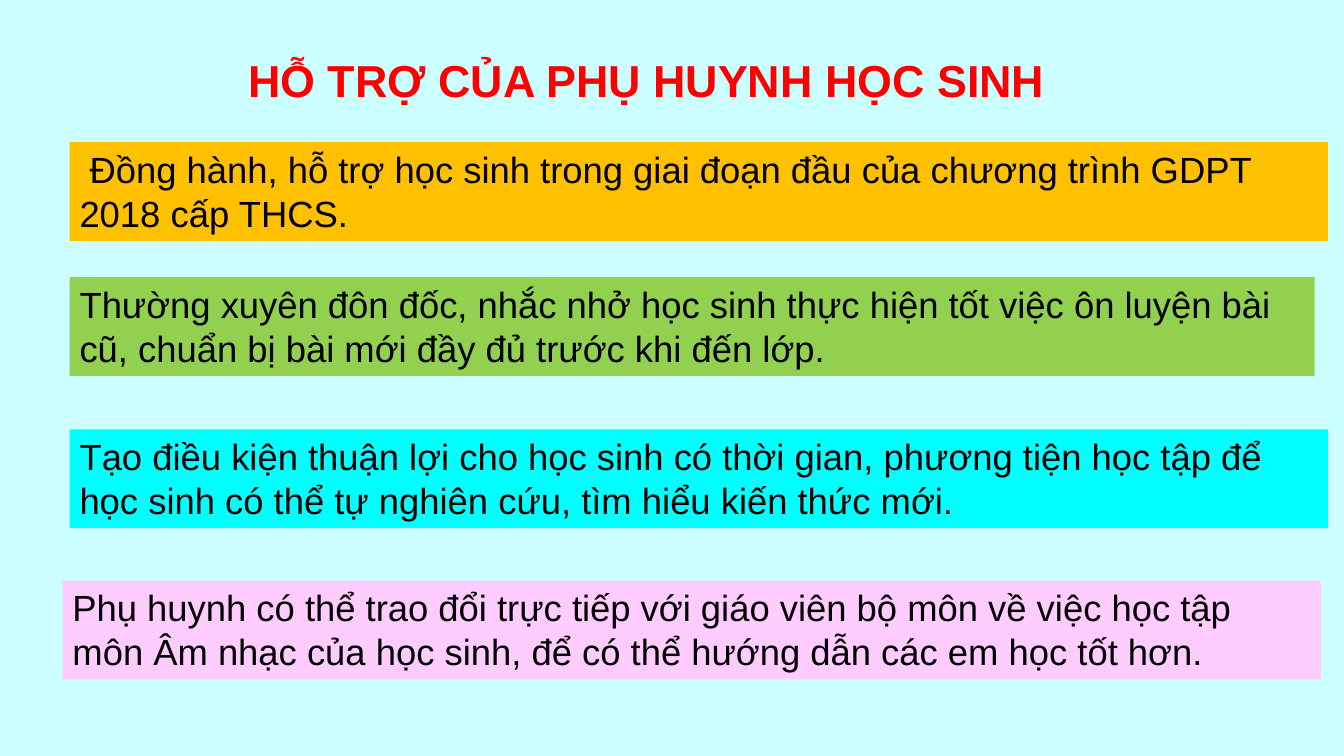
from dataclasses import dataclass

from pptx import Presentation
from pptx.dml.color import RGBColor
from pptx.enum.shapes import MSO_SHAPE
from pptx.enum.text import MSO_ANCHOR, MSO_AUTO_SIZE, PP_ALIGN
from pptx.util import Inches, Pt

RECTANGLE = MSO_SHAPE.RECTANGLE
TOP = MSO_ANCHOR.TOP
LEFT = PP_ALIGN.LEFT
NO_AUTOFIT = MSO_AUTO_SIZE.NONE
TITLE_ONLY = 5


@dataclass(frozen=True)
class Theme:
    """Colours, font and type sizes of the slide."""

    font: str = "Arial"
    background: str = "CCFFFF"
    title_colour: str = "FF0000"
    text_colour: str = "000000"
    title_size: int = 32
    text_size: int = 26


THEME = Theme()
TITLE = " HỖ TRỢ CỦA PHỤ HUYNH HỌC SINH"
TITLE_BOX = (2.24, 0.47, 9.24, 0.64)
BAND_HEIGHT = 0.98
BANDS = [
    (0.69, 1.41, 12.48, "FFC000",
     " Đồng hành, hỗ trợ học sinh trong giai đoạn đầu của chương trình GDPT "
     "2018 cấp THCS."),
    (0.69, 2.75, 12.35, "92D050",
     "Thường xuyên đôn đốc, nhắc nhở học sinh thực hiện tốt việc ôn luyện bài "
     "cũ, chuẩn bị bài mới đầy đủ trước khi đến lớp."),
    (0.69, 4.26, 12.48, "00FFFF",
     "Tạo điều kiện thuận lợi cho học sinh có thời gian, phương tiện học tập để "
     "học sinh có thể tự nghiên cứu, tìm hiểu kiến thức mới."),
    (0.62, 5.76, 12.48, "FFCCFF",
     "Phụ huynh có thể trao đổi trực tiếp với giáo viên bộ môn về việc học tập "
     "môn Âm nhạc của học sinh, để có thể hướng dẫn các em học tốt hơn."),
]


def set_attributes(target, values):
    """Set each named attribute of the target."""
    for name, value in values.items():
        setattr(target, name, value)


def write_text(shape, text, size, colour, bold):
    """Fill the shape with one left-aligned paragraph."""
    frame = shape.text_frame
    set_attributes(frame, {"word_wrap": True, "auto_size": NO_AUTOFIT,
                           "vertical_anchor": TOP})
    para = frame.paragraphs[0]
    set_attributes(para, {"alignment": LEFT, "line_spacing": 1.0,
                          "space_before": Pt(0)})
    span = para.add_run()
    span.text = text
    set_attributes(span.font, {"name": THEME.font, "size": Pt(size), "bold": bold})
    span.font.color.rgb = RGBColor.from_string(colour)


def place_title(page, box):
    """Move the title placeholder to the box and write the heading."""
    title = page.shapes.title
    names = ("left", "top", "width", "height")
    set_attributes(title, dict(zip(names, map(Inches, box))))
    write_text(title, TITLE, THEME.title_size, THEME.title_colour, True)


def add_band(page, box, fill, text):
    """Draw a coloured band of text in the box."""
    band = page.shapes.add_shape(RECTANGLE, *map(Inches, box))
    band.shadow.inherit = False
    band.fill.solid()
    band.fill.fore_color.rgb = RGBColor.from_string(fill)
    band.line.fill.background()
    write_text(band, text, THEME.text_size, THEME.text_colour, False)


def main():
    """Build the slide and save the deck."""
    deck = Presentation()
    set_attributes(deck, {"slide_width": Inches(13.33), "slide_height": Inches(7.5)})
    page = deck.slides.add_slide(deck.slide_layouts[TITLE_ONLY])
    backdrop = page.background.fill
    backdrop.solid()
    backdrop.fore_color.rgb = RGBColor.from_string(THEME.background)
    place_title(page, TITLE_BOX)
    for left, top, width, fill, text in BANDS:
        add_band(page, (left, top, width, BAND_HEIGHT), fill, text)
    deck.save("out.pptx")


if __name__ == "__main__":
    main()
